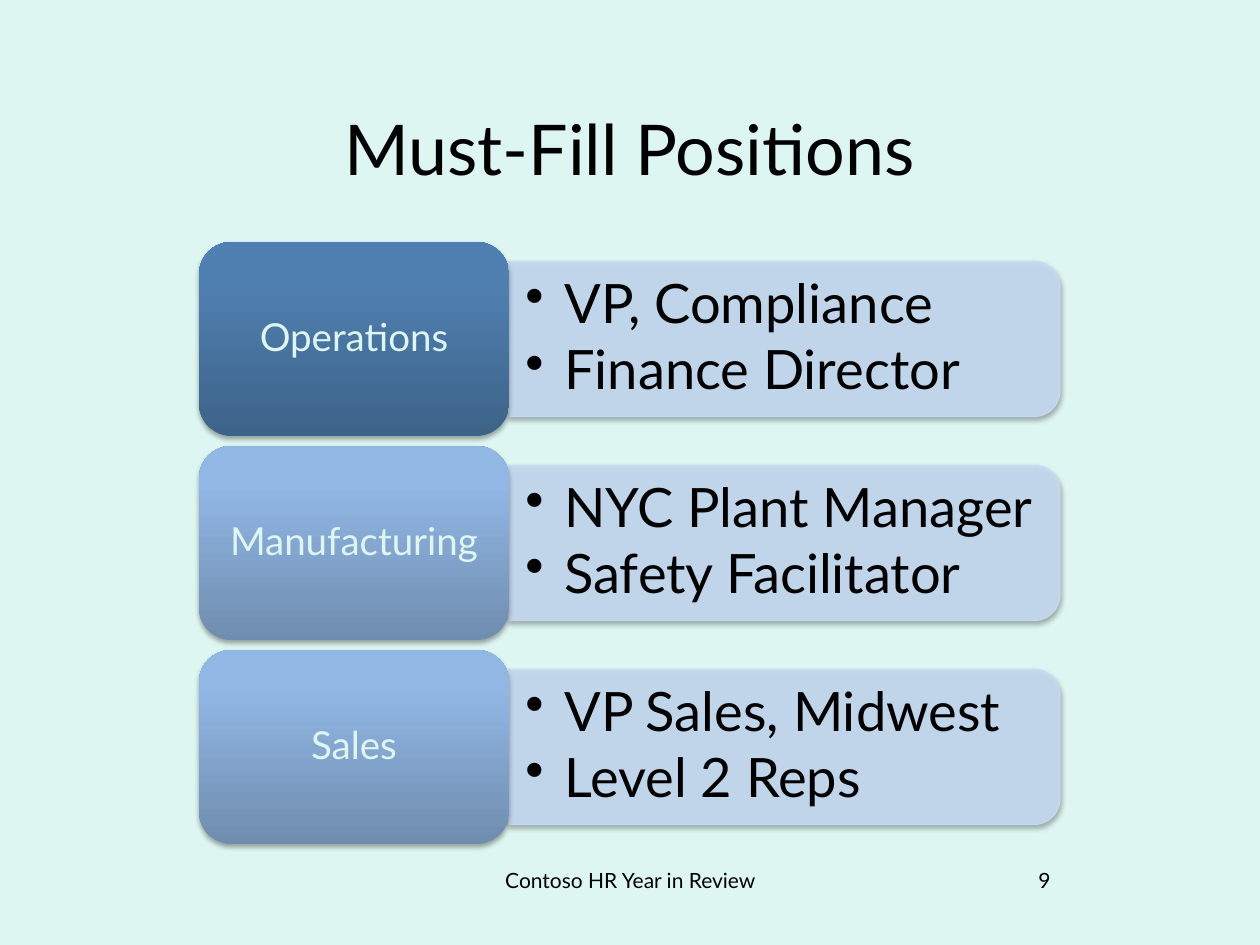
from copy import deepcopy

from lxml import etree
from pptx import Presentation
from pptx.dml.color import RGBColor
from pptx.enum.shapes import MSO_SHAPE
from pptx.enum.text import MSO_ANCHOR, PP_ALIGN
from pptx.oxml.ns import qn
from pptx.util import Emu, Inches, Pt

CARD, PANEL = MSO_SHAPE.ROUNDED_RECTANGLE, MSO_SHAPE.ROUND_2_SAME_RECTANGLE
TOP, MIDDLE = MSO_ANCHOR.TOP, MSO_ANCHOR.MIDDLE
LEFT, CENTER, RIGHT = PP_ALIGN.LEFT, PP_ALIGN.CENTER, PP_ALIGN.RIGHT

TITLE = "Must-Fill Positions"
FOOTER = "Contoso HR Year in Review"
PAGE = "9"
DEPARTMENTS = [
    ("Operations", ["VP, Compliance", "Finance Director"], "deep"),
    ("Manufacturing", ["NYC Plant Manager", "Safety Facilitator"], "soft"),
    ("Sales", ["VP Sales, Midwest", "Level 2 Reps"], "soft"),
]
THEME = {
    "font": "Lato",
    "background": "DEF6F1", "text": "000000", "label": "DEF6F1", "panel": "C6DAF2",
    "deep": [(0, "3D6388"), (0.8, "5080B1"), (1, "4E81B3")],
    "soft": [(0, "6F8DAF"), (0.8, "91B7E4"), (1, "90B8E7")],
    "title_size": 40, "list_size": 31, "label_size": 22, "footer_size": 12,
}

# Layout in px, 126 to the inch
SCALE = 914400 / 126
CARD_X, CARD_Y, CARD_W, CARD_H, PITCH = 199, 242, 310, 194, 204
PANEL_X, PANEL_W, PANEL_H = CARD_X + CARD_W, 551, 155
LIST_W, LIST_H = 543, 140


def px(*values):
    return [Emu(round(v * SCALE)) for v in values]


def rgb(name):
    return RGBColor.from_string(THEME.get(name, name))


def set_text(shape, lines, size, color="text", align=CENTER, anchor=MIDDLE):
    tf = shape.text_frame
    tf.word_wrap = True
    tf.vertical_anchor = anchor
    tf.text = "\n".join(lines)
    for p in tf.paragraphs:
        p.alignment = align
        for r in p.runs:
            r.font.name = THEME["font"]
            r.font.size = Pt(THEME[size])
            r.font.color.rgb = rgb(color)
    return tf


def add_box(s, kind, box):
    """Add a preset shape with a soft shadow below it."""
    sp = s.shapes.add_shape(kind, *px(*box))
    sp.shadow.inherit = False
    effects = sp.element.spPr.find(qn("a:effectLst"))
    shadow = etree.SubElement(effects, qn("a:outerShdw"), blurRad="40000",
                              dist="23000", dir="5400000", rotWithShape="0")
    color = etree.SubElement(shadow, qn("a:srgbClr"), val="000000")
    etree.SubElement(color, qn("a:alpha"), val="35000")
    return sp


def add_panel(s, center_y):
    """Add a panel turned so that its rounded corners face right."""
    center_x = PANEL_X + PANEL_W / 2
    sp = add_box(s, PANEL, (center_x - PANEL_H / 2, center_y - PANEL_W / 2, PANEL_H, PANEL_W))
    sp.rotation = 90
    sp.fill.solid()
    sp.fill.fore_color.rgb = sp.line.color.rgb = rgb("panel")
    sp.line.width = Pt(0.75)
    for color in sp.element.spPr.iter(qn("a:srgbClr")):
        if color.get("val") == THEME["panel"]:
            etree.SubElement(color, qn("a:alpha"), val="90000")


def add_list(s, items, center_y):
    box = s.shapes.add_textbox(*px(PANEL_X, center_y - LIST_H / 2, LIST_W, LIST_H))
    tf = set_text(box, items, "list_size", align=LEFT)
    tf.margin_left = tf.margin_right = Inches(0.13)
    tf.margin_top = tf.margin_bottom = Inches(0.06)
    for p in tf.paragraphs:
        p.level = 1
        p.line_spacing = 0.9
        p.space_after = Pt(0.15 * THEME["list_size"])
        pPr = p._p.get_or_add_pPr()
        pPr.set("marL", str(Inches(0.31)))
        pPr.set("indent", str(-Inches(0.31)))
        etree.SubElement(pPr, qn("a:buChar"), char="•")


def add_card(s, label, stops, top):
    sp = add_box(s, CARD, (CARD_X, top, CARD_W, CARD_H))
    sp.line.fill.background()
    sp.fill.gradient()
    sp.fill.gradient_angle = 90
    stop_list = sp.element.spPr.find(".//" + qn("a:gsLst"))
    stop_list.append(deepcopy(stop_list[0]))
    for stop, (position, color) in zip(sp.fill.gradient_stops, stops):
        stop.position = position
        stop.color.rgb = rgb(color)
    set_text(sp, [label], "label_size", "label").paragraphs[0].line_spacing = 0.9


def main():
    prs = Presentation()
    prs.slide_width, prs.slide_height = px(1260, 945)
    s = prs.slides.add_slide(prs.slide_layouts[5])
    s.background.fill.solid()
    s.background.fill.fore_color.rgb = rgb("background")

    title = s.shapes.title
    title.left, title.top, title.width, title.height = px(199, 63, 861, 168)
    set_text(title, [TITLE], "title_size")

    for i, (label, positions, tone) in enumerate(DEPARTMENTS):
        top = CARD_Y + i * PITCH
        center_y = top + CARD_H / 2
        add_panel(s, center_y)
        add_list(s, positions, center_y)
        add_card(s, label, THEME[tone], top)

    for text, x, width, align in [(FOOTER, 431, 399, CENTER), (PAGE, 840, 223, RIGHT)]:
        box = s.shapes.add_textbox(*px(x, 861, width, 66))
        set_text(box, [text], "footer_size", align=align, anchor=TOP)

    prs.save("out.pptx")


if __name__ == "__main__":
    main()
